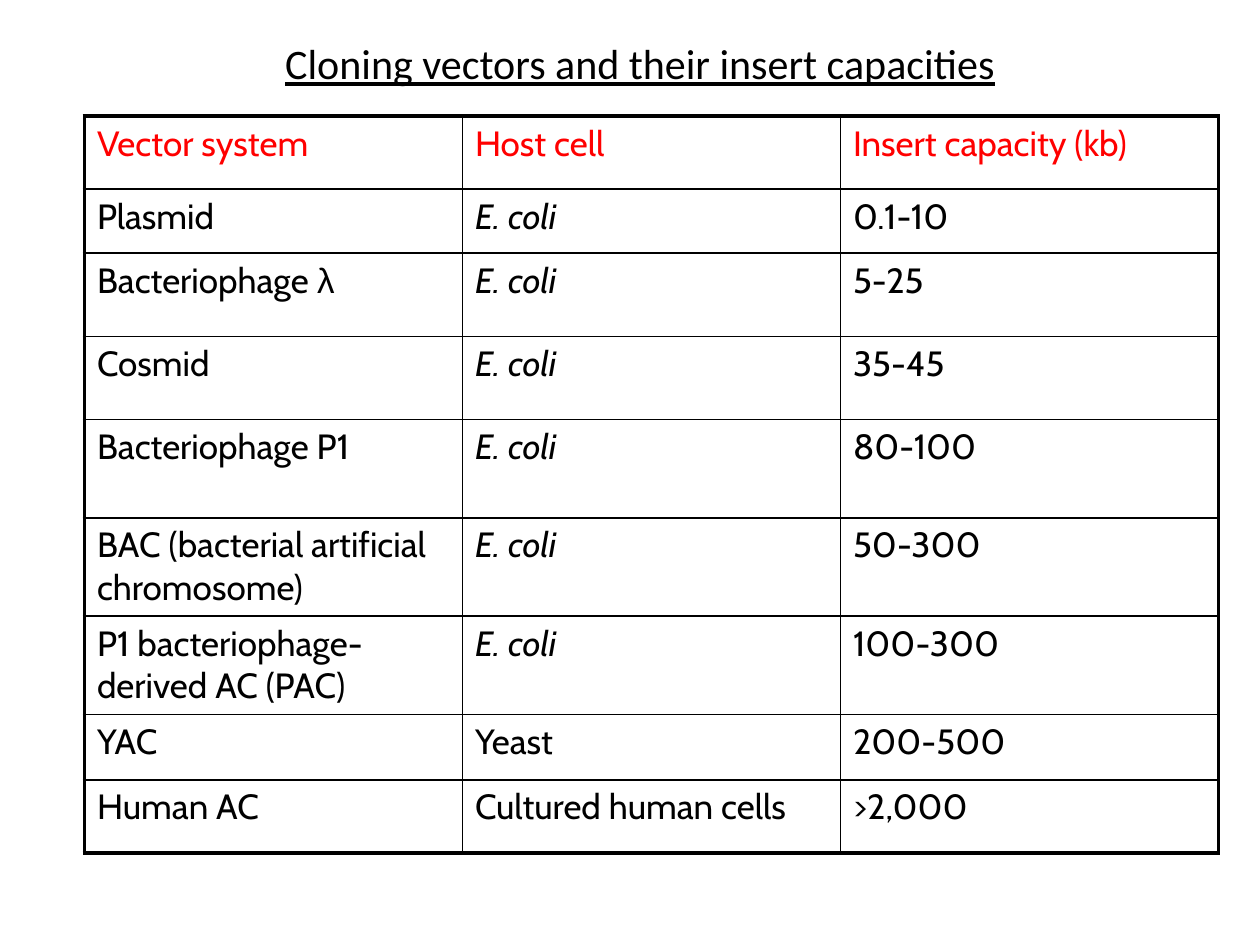
from dataclasses import dataclass

from lxml import etree
from pptx import Presentation
from pptx import util as u
from pptx.dml.color import RGBColor
from pptx.enum import text
from pptx.oxml.ns import qn


@dataclass(frozen=True)
class Theme:
    ink: str = "000000"
    heading: str = "FF0000"
    title_font: str = "Calibri"
    body_font: str = "Cabin"
    symbol_font: str = "Arial"
    title_size: int = 24
    body_size: int = 20
    outer_line: float = 2.25
    inner_line: float = 1


THEME = Theme()
COLUMN_WIDTH = 3
ROW_HEIGHTS = [0.58, 0.51, 0.66, 0.66, 0.78, 0.78, 0.78, 0.52, 0.58]
VECTORS = [
    ("Vector system", "Host cell", "Insert capacity (kb)"),
    ("Plasmid", "E. coli", "0.1-10"),
    ("Bacteriophage λ", "E. coli", "5-25"),
    ("Cosmid", "E. coli", "35-45"),
    ("Bacteriophage P1", "E. coli", "80-100"),
    ("BAC (bacterial artificial chromosome)", "E. coli", "50-300"),
    ("P1 bacteriophage-derived AC (PAC)", "E. coli", "100-300"),
    ("YAC", "Yeast", "200-500"),
    ("Human AC", "Cultured human cells", ">2,000"),
]


def add_span(para, words, *, font=THEME.body_font, size=THEME.body_size,
             color=THEME.ink, italic=False, underline=False):
    span = para.add_run()
    span.text = words
    span.font.name = font
    span.font.size = u.Pt(size)
    span.font.color.rgb = RGBColor.from_string(color)
    span.font.italic = italic
    span.font.underline = underline


def add_title(page, words):
    box = page.shapes.add_textbox(u.Inches(1.83), u.Inches(0.25),
                                  u.Inches(6.5), u.Inches(0.5))
    box.text_frame.word_wrap = True
    box.text_frame.auto_size = text.MSO_AUTO_SIZE.SHAPE_TO_FIT_TEXT
    para = box.text_frame.paragraphs[0]
    para.alignment = text.PP_ALIGN.CENTER
    add_span(para, words, font=THEME.title_font, size=THEME.title_size,
             underline=True)


def set_borders(cell, outer_sides):
    """Rule all four sides, heavier on the outer edge of the table."""
    properties = cell._tc.get_or_add_tcPr()
    for position, side in enumerate(("lnL", "lnR", "lnT", "lnB")):
        width = THEME.outer_line if side in outer_sides else THEME.inner_line
        line = etree.Element(qn(f"a:{side}"), w=str(u.Pt(width)))
        fill = etree.SubElement(line, qn("a:solidFill"))
        etree.SubElement(fill, qn("a:srgbClr"), val=THEME.ink)
        properties.insert(position, line)


def fill_cell(cell, words, is_heading):
    cell.fill.background()
    para = cell.text_frame.paragraphs[0]
    color = THEME.heading if is_heading else THEME.ink
    latin, symbol, _ = words.partition("λ")
    add_span(para, latin, color=color, italic=words == "E. coli")
    if symbol:
        add_span(para, symbol, font=THEME.symbol_font, color=color)


def add_vector_table(page):
    row_count, column_count = len(VECTORS), len(VECTORS[0])
    frame = page.shapes.add_table(
        row_count, column_count, u.Inches(0.67), u.Inches(0.92),
        u.Inches(COLUMN_WIDTH * column_count), u.Inches(sum(ROW_HEIGHTS)))
    table = frame.table
    table.first_row = table.horz_banding = False
    for column in table.columns:
        column.width = u.Inches(COLUMN_WIDTH)
    for row, height in zip(table.rows, ROW_HEIGHTS):
        row.height = u.Inches(height)
    for r, record in enumerate(VECTORS):
        for c, words in enumerate(record):
            cell = table.cell(r, c)
            fill_cell(cell, words, is_heading=r == 0)
            edges = {"lnL": c == 0, "lnR": c == column_count - 1,
                     "lnT": r == 0, "lnB": r == row_count - 1}
            set_borders(cell, {side for side, outer in edges.items() if outer})


def main():
    deck = Presentation()
    deck.slide_width, deck.slide_height = u.Inches(10), u.Inches(7.5)
    page = deck.slides.add_slide(deck.slide_layouts[6])
    add_vector_table(page)
    add_title(page, "Cloning vectors and their insert capacities")
    deck.save("out.pptx")


if __name__ == "__main__":
    main()
